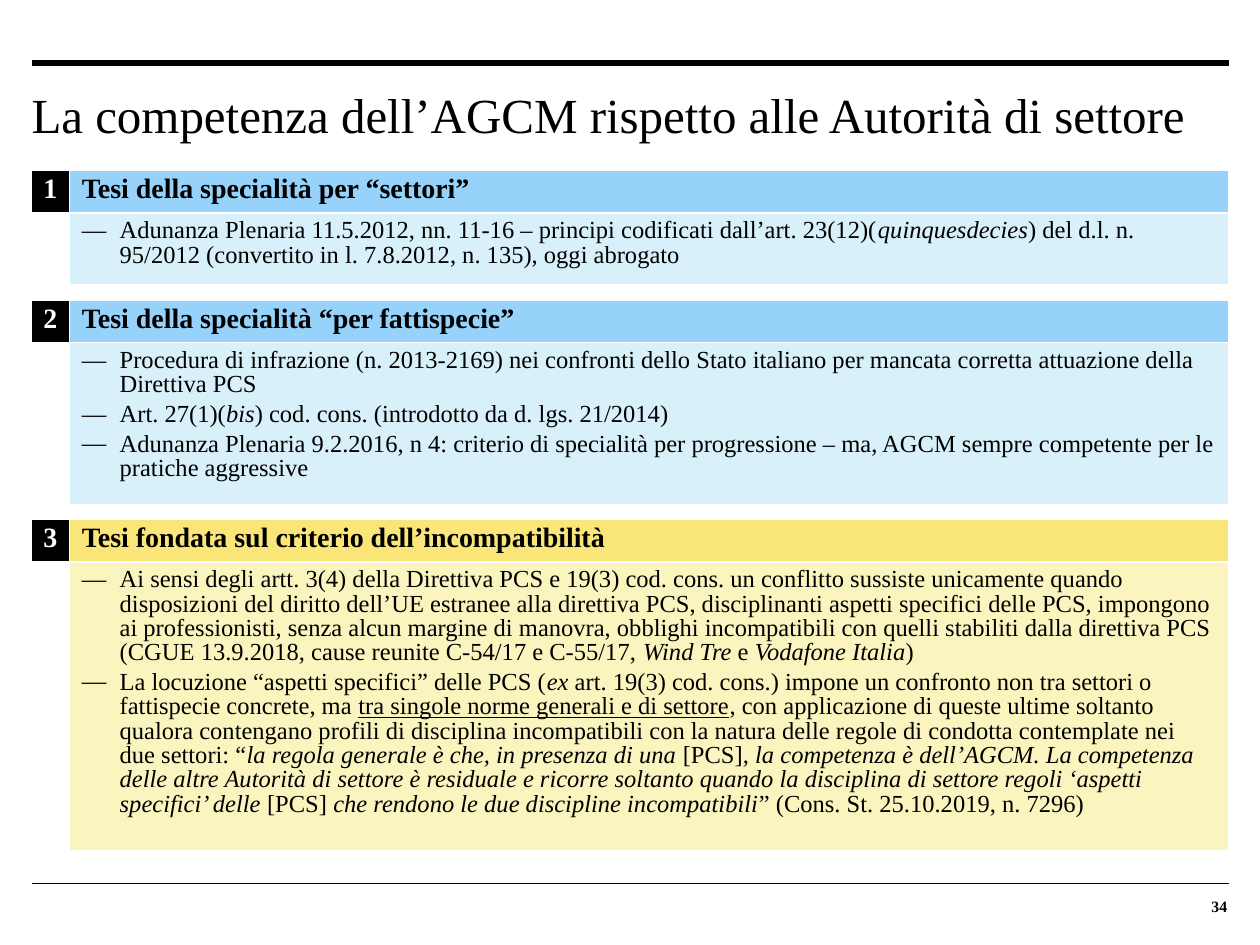
from lxml.etree import SubElement
from pptx import Presentation
from pptx.dml.color import RGBColor
from pptx.enum.shapes import MSO_CONNECTOR
from pptx.enum.text import MSO_ANCHOR, PP_ALIGN
from pptx.oxml.ns import qn
from pptx.util import Pt

PX = 9144  # 100 px to the inch
FONT = "Times New Roman"
LEFT, WIDTH, NUMBER_WIDTH = 25, 950, 30
HEADER_HEIGHT = 32
BLUE, YELLOW = ("96D2FA", "D7F0FA"), ("FAE678", "FAF5BE")

# Within the paragraphs, * switches italics and _ switches underlining.
SECTIONS = [
    (135, 54, BLUE, "Tesi della specialità per “settori”", [
        "Adunanza Plenaria 11.5.2012, nn. 11-16 – principi codificati dall’art. 23(12)(*quinquesdecies*) "
        "del d.l. n. 95/2012 (convertito in l. 7.8.2012, n. 135), oggi abrogato",
    ]),
    (238, 120, BLUE, "Tesi della specialità “per fattispecie”", [
        "Procedura di infrazione (n. 2013-2169) nei confronti dello Stato italiano per mancata corretta "
        "attuazione della Direttiva PCS",
        "Art. 27(1)(*bis*) cod. cons. (introdotto da d. lgs. 21/2014)",
        "Adunanza Plenaria 9.2.2016, n 4: criterio di specialità per progressione – ma, AGCM sempre "
        "competente per le pratiche aggressive",
    ]),
    (412, 212, YELLOW, "Tesi fondata sul criterio dell’incompatibilità", [
        "Ai sensi degli artt. 3(4) della Direttiva PCS e 19(3) cod. cons. un conflitto sussiste unicamente "
        "quando disposizioni del diritto dell’UE estranee alla direttiva PCS, disciplinanti aspetti "
        "specifici delle PCS, impongono ai professionisti, senza alcun margine di manovra, obblighi "
        "incompatibili con quelli stabiliti dalla direttiva PCS (CGUE 13.9.2018, cause reunite C‑54/17 e "
        "C‑55/17, *Wind Tre *e *Vodafone Italia*)",
        "La locuzione “aspetti specifici” delle PCS (*ex* art. 19(3) cod. cons.) impone un confronto non "
        "tra settori o fattispecie concrete, ma _tra singole norme generali e di settore_, con "
        "applicazione di queste ultime soltanto qualora contengano profili di disciplina incompatibili "
        "con la natura delle regole di condotta contemplate nei due settori: “*la regola generale è che, "
        "in presenza di una* [PCS], *la competenza è dell’AGCM. La competenza delle altre Autorità di "
        "settore è residuale e ricorre soltanto quando la disciplina di settore regoli ‘aspetti "
        "specifici’ delle *[PCS] *che rendono le due discipline incompatibili*” (Cons. St. 25.10.2019, "
        "n. 7296)",
    ]),
]


def style(run, size, color="000000", bold=False):
    run.font.name = FONT
    run.font.size = Pt(size)
    run.font.bold = bold
    run.font.color.rgb = RGBColor.from_string(color)


def add_white_border(cell, sides):
    properties = cell._tc.get_or_add_tcPr()
    for index, side in enumerate(sides):
        line = properties.makeelement(qn(f"a:{side}"), {"w": str(Pt(1))})
        fill = SubElement(line, qn("a:solidFill"))
        SubElement(fill, qn("a:srgbClr"), val="FFFFFF")
        properties.insert(index, line)


presentation = Presentation()
presentation.slide_width, presentation.slide_height = 1000 * PX, 750 * PX
slide = presentation.slides.add_slide(presentation.slide_layouts[5])

for y, weight in [(50, 3), (701, 0.5)]:
    rule = slide.shapes.add_connector(
        MSO_CONNECTOR.STRAIGHT, LEFT * PX, y * PX, (LEFT + WIDTH) * PX, y * PX)
    rule.line.width = Pt(weight)
    rule.line.color.rgb = RGBColor.from_string("000000")
    SubElement(rule._element.spPr, qn("a:effectLst"))

title = slide.shapes.title
title.left, title.top, title.width, title.height = LEFT * PX, 67 * PX, WIDTH * PX, 99 * PX
title.text_frame.text = "La competenza dell’AGCM rispetto alle Autorità di settore"
title.text_frame.vertical_anchor = MSO_ANCHOR.TOP

page_number = slide.shapes.add_textbox(908 * PX, 704 * PX, 66 * PX, 23 * PX)
page_number.text_frame.text = "34"
page_number.text_frame.word_wrap = True
page_number.text_frame.vertical_anchor = MSO_ANCHOR.BOTTOM

for shape, size, bold, alignment in [(title, 28, False, PP_ALIGN.LEFT),
                                     (page_number, 9, True, PP_ALIGN.RIGHT)]:
    frame = shape.text_frame
    frame.margin_left = frame.margin_top = frame.margin_right = frame.margin_bottom = 0
    frame.paragraphs[0].alignment = alignment
    style(frame.paragraphs[0].runs[0], size, bold=bold)

for number, (top, body_height, (header_color, body_color), heading, points) in enumerate(SECTIONS, 1):
    table = slide.shapes.add_table(
        2, 2, LEFT * PX, top * PX, WIDTH * PX, (HEADER_HEIGHT + body_height) * PX).table
    table.first_row = table.horz_banding = False
    table.columns[0].width = NUMBER_WIDTH * PX
    table.columns[1].width = (WIDTH - NUMBER_WIDTH) * PX
    table.rows[0].height, table.rows[1].height = HEADER_HEIGHT * PX, body_height * PX

    number_cell, heading_cell = table.cell(0, 0), table.cell(0, 1)
    blank_cell, body_cell = table.cell(1, 0), table.cell(1, 1)
    number_cell.margin_left = number_cell.margin_right = 5 * PX
    body_cell.margin_bottom = 10 * PX
    blank_cell.fill.background()

    for cell, color in [(number_cell, "000000"), (heading_cell, header_color), (body_cell, body_color)]:
        cell.fill.solid()
        cell.fill.fore_color.rgb = RGBColor.from_string(color)
    for cell in (number_cell, heading_cell):
        add_white_border(cell, ["lnB"])
    for cell in (blank_cell, body_cell):
        add_white_border(cell, ["lnT", "lnB"])

    for cell, text, color in [(number_cell, str(number), "FFFFFF"), (heading_cell, heading, "000000")]:
        cell.text_frame.text = text
        paragraph = cell.text_frame.paragraphs[0]
        paragraph.line_spacing = 0.9
        style(paragraph.runs[0], 16, color, bold=True)
    number_cell.text_frame.paragraphs[0].alignment = PP_ALIGN.CENTER

    for index, point in enumerate(points):
        frame = body_cell.text_frame
        paragraph = frame.add_paragraph() if index else frame.paragraphs[0]
        paragraph.line_spacing = 0.9
        paragraph.space_after = Pt(3)
        properties = paragraph._p.get_or_add_pPr()
        properties.set("marL", str(30 * PX))
        properties.set("indent", str(-30 * PX))
        SubElement(properties, qn("a:buFont"), typeface=FONT)
        SubElement(properties, qn("a:buChar"), char="—")
        for italic_index, part in enumerate(point.split("*")):
            for underline_index, text in enumerate(part.split("_")):
                if text:
                    run = paragraph.add_run()
                    run.text = text
                    style(run, 14)
                    run.font.italic = italic_index % 2 == 1
                    run.font.underline = underline_index % 2 == 1

presentation.save("out.pptx")
